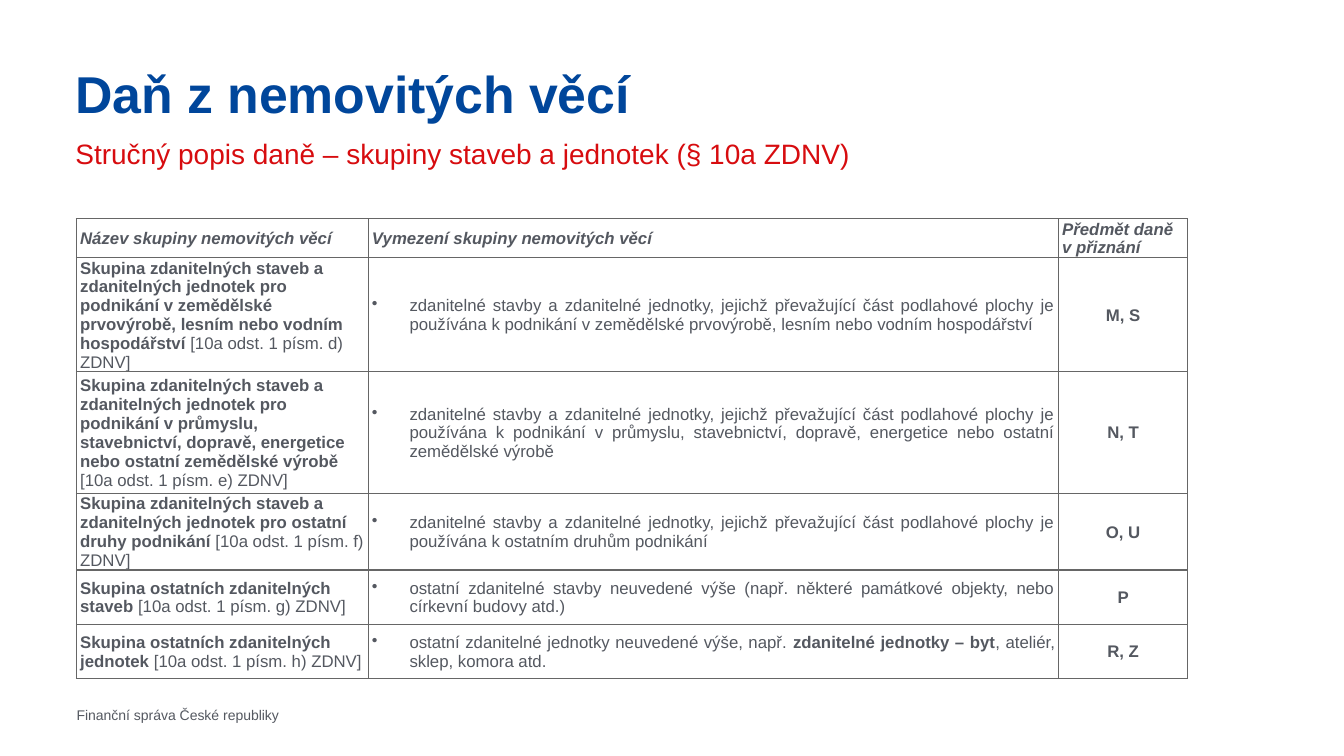
import dataclasses

import lxml.etree
import pptx
import pptx.dml.color
import pptx.enum.text
import pptx.oxml.ns
import pptx.util

Cm = pptx.util.Cm
Pt = pptx.util.Pt
ALIGN = pptx.enum.text.PP_ALIGN
ANCHOR = pptx.enum.text.MSO_ANCHOR

BLUE, RED, GREY, BORDER = "00469B", "D70C0F", "545860", "666666"
FONT = "Arial"
COLUMN_WIDTHS = [7.35, 17.4, 3.25]
HEADER_HEIGHT = 0.71
HEADINGS = ["Název skupiny nemovitých věcí", "Vymezení skupiny nemovitých věcí",
            "Předmět daně v přiznání"]


@dataclasses.dataclass
class Part:
    """A stretch of text in one style."""
    text: str
    bold: bool = False
    italic: bool = False
    size: float = 12
    colour: str = GREY


@dataclasses.dataclass
class Group:
    """One table row: a property group, its definition and its return codes."""
    name: str
    section: str
    definition: list[Part]
    codes: str
    height: float


GROUPS = [
    Group("Skupina zdanitelných staveb a zdanitelných jednotek pro podnikání "
          "v zemědělské prvovýrobě, lesním nebo vodním hospodářství ", "d",
          [Part("zdanitelné stavby a zdanitelné jednotky, jejichž převažující část "
                "podlahové plochy je používána k podnikání v zemědělské prvovýrobě, "
                "lesním nebo vodním hospodářství")], "M, S", 2.74),
    Group("Skupina zdanitelných staveb a zdanitelných jednotek pro podnikání "
          "v průmyslu, stavebnictví, dopravě, energetice nebo ostatní zemědělské "
          "výrobě ", "e",
          [Part("zdanitelné stavby a zdanitelné jednotky, jejichž převažující část "
                "podlahové plochy je používána k podnikání v průmyslu, stavebnictví, "
                "dopravě, energetice nebo ostatní zemědělské výrobě")], "N, T", 3.07),
    Group("Skupina zdanitelných staveb a zdanitelných jednotek pro ostatní druhy "
          "podnikání ", "f",
          [Part("zdanitelné stavby a zdanitelné jednotky, jejichž převažující část "
                "podlahové plochy je používána k ostatním druhům podnikání")],
          "O, U", 1.73),
    Group("Skupina ostatních zdanitelných staveb ", "g",
          [Part("ostatní zdanitelné stavby neuvedené výše (např. některé památkové "
                "objekty, nebo církevní budovy atd.)")], "P", 1.37),
    Group("Skupina ostatních zdanitelných jednotek ", "h",
          [Part("ostatní zdanitelné jednotky neuvedené výše, např. "),
           Part("zdanitelné jednotky – byt", bold=True),
           Part(", ateliér, sklep, komora atd.")], "R, Z", 1.37),
]


def rgb(colour: str) -> pptx.dml.color.RGBColor:
    return pptx.dml.color.RGBColor.from_string(colour)


def apply(target, values: dict) -> None:
    for attribute, value in values.items():
        setattr(target, attribute, value)


def write(paragraph, parts: list[Part], **spacing) -> None:
    apply(paragraph, {"space_before": Pt(0), **spacing})
    for part in parts:
        run = paragraph.add_run()
        run.text = part.text
        apply(run.font, {"name": FONT, "size": Pt(part.size),
                         "bold": part.bold, "italic": part.italic})
        run.font.color.rgb = rgb(part.colour)


def set_bullet(paragraph, mark: str = "", indent: float = 0) -> None:
    properties = paragraph._p.get_or_add_pPr()
    properties.set("marL", str(Cm(indent)))
    properties.set("indent", str(-Cm(indent)))
    tag = pptx.oxml.ns.qn("a:buChar" if mark else "a:buNone")
    bullet = lxml.etree.SubElement(properties, tag)
    if mark:
        bullet.set("char", mark)


def place(shape, left: float, top: float, width: float, height: float,
          anchor, padding: float = 0):
    apply(shape, {"left": Cm(left), "top": Cm(top),
                  "width": Cm(width), "height": Cm(height)})
    apply(shape.text_frame, {
        "margin_left": 0, "margin_right": 0, "margin_top": Cm(padding),
        "margin_bottom": Cm(padding), "word_wrap": True, "vertical_anchor": anchor,
        "auto_size": pptx.enum.text.MSO_AUTO_SIZE.NONE})
    return shape.text_frame.paragraphs[0]


def format_cell(cell, anchor=ANCHOR.MIDDLE):
    apply(cell, {"margin_left": Cm(0.09), "margin_right": Cm(0.09),
                 "margin_top": Cm(0.03), "margin_bottom": 0,
                 "vertical_anchor": anchor})
    qn = pptx.oxml.ns.qn
    properties = cell._tc.get_or_add_tcPr()
    for side in ("lnL", "lnR", "lnT", "lnB"):
        line = lxml.etree.SubElement(properties, qn(f"a:{side}"), w=str(Pt(1)))
        fill = lxml.etree.SubElement(line, qn("a:solidFill"))
        lxml.etree.SubElement(fill, qn("a:srgbClr"), val=BORDER)
    cell.fill.background()
    return cell.text_frame.paragraphs[0]


def add_groups_table(slide) -> None:
    heights = [HEADER_HEIGHT] + [group.height for group in GROUPS]
    table = slide.shapes.add_table(
        len(heights), len(COLUMN_WIDTHS), Cm(1.93), Cm(5.51),
        Cm(sum(COLUMN_WIDTHS)), Cm(sum(heights))).table
    apply(table, {"first_row": False, "horz_banding": False})
    for column, width in zip(table.columns, COLUMN_WIDTHS):
        column.width = Cm(width)
    for row, height in zip(table.rows, heights):
        row.height = Cm(height)

    # Header row
    after = Pt(6)
    for cell, heading in zip(table.rows[0].cells, HEADINGS):
        anchor = ANCHOR.TOP if heading == HEADINGS[-1] else ANCHOR.MIDDLE
        write(format_cell(cell, anchor), [Part(heading, bold=True, italic=True)],
              space_after=after)

    # One row per group
    for index, group in enumerate(GROUPS, start=1):
        name, definition, codes = map(format_cell, table.rows[index].cells)
        write(name, [Part(group.name, bold=True),
                     Part(f"[10a odst. 1 písm. {group.section}) ZDNV]")],
              space_after=after)
        set_bullet(definition, "•", 0.95)
        write(definition, group.definition, alignment=ALIGN.JUSTIFY, space_after=after)
        write(codes, [Part(group.codes, bold=True)],
              alignment=ALIGN.CENTER, space_after=after)


def main() -> None:
    deck = pptx.Presentation()
    apply(deck, {"slide_width": Cm(33.87), "slide_height": Cm(19.05)})
    slide = deck.slides.add_slide(deck.slide_layouts[1])

    # Title and subtitle
    title = place(slide.shapes.title, 1.9, 1.73, 27.5, 1.65, ANCHOR.TOP)
    write(title, [Part("Daň z nemovitých věcí", bold=True, size=37, colour=BLUE)],
          alignment=ALIGN.LEFT, line_spacing=0.9)
    subtitle = place(slide.placeholders[1], 1.9, 3.45, 27.5, 2.13, ANCHOR.TOP)
    set_bullet(subtitle)
    write(subtitle, [Part("Stručný popis daně – skupiny staveb a jednotek (§ 10a ZDNV)",
                          size=20, colour=RED)], space_after=Pt(10))

    # Footer
    footer = place(slide.shapes.add_textbox(0, 0, 0, 0), 1.93, 17.5, 13, 1.02,
                   ANCHOR.MIDDLE, padding=0.1)
    write(footer, [Part("Finanční správa České republiky", size=10)])

    add_groups_table(slide)
    deck.save("out.pptx")


if __name__ == "__main__":
    main()
